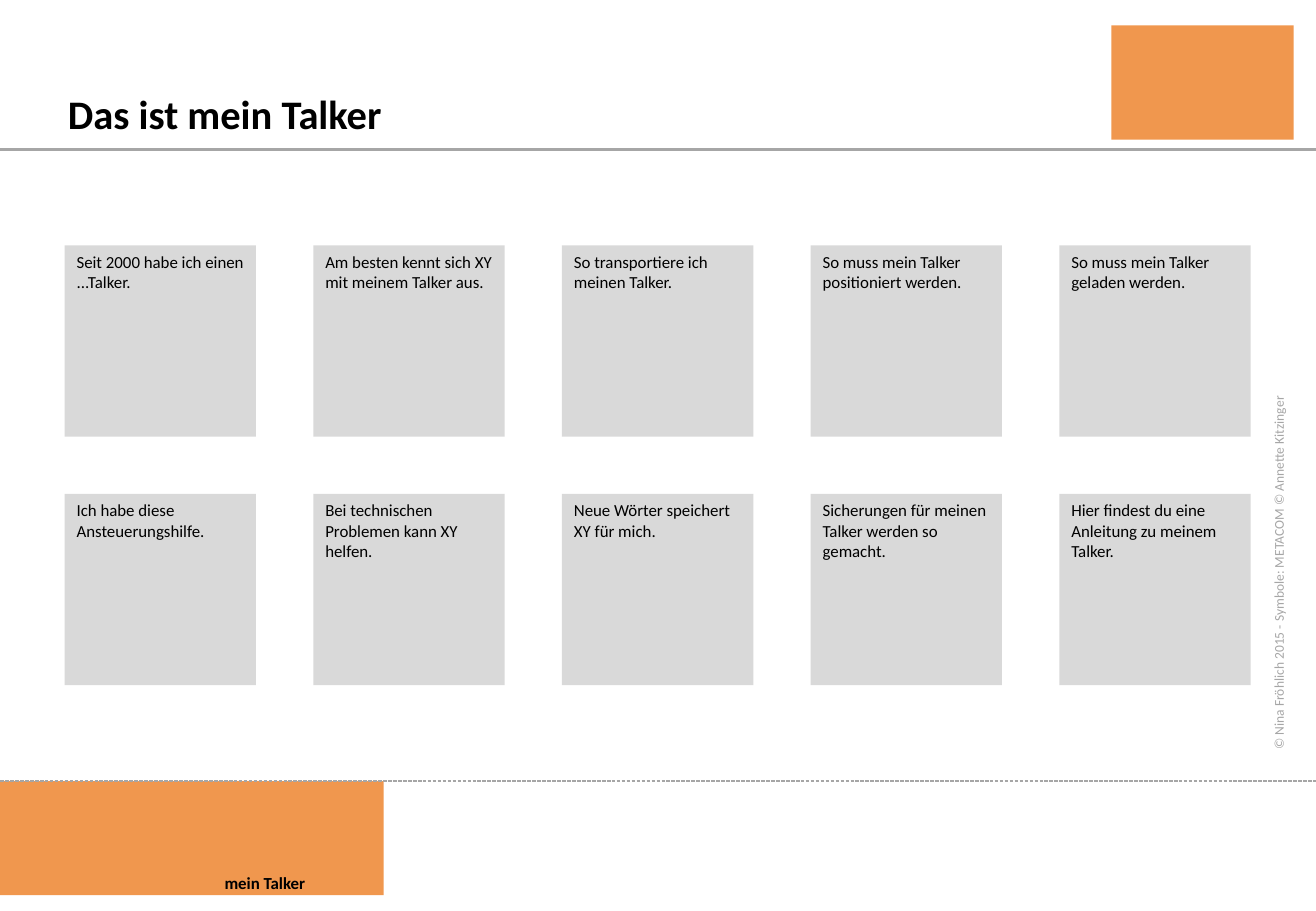
from lxml import etree
from pptx import Presentation
from pptx.dml.color import RGBColor
from pptx.enum.dml import MSO_LINE
from pptx.enum.shapes import MSO_CONNECTOR, MSO_SHAPE
from pptx.enum.text import MSO_ANCHOR, MSO_AUTO_SIZE, PP_ALIGN
from pptx.oxml.ns import qn
from pptx.util import Pt

RECTANGLE = MSO_SHAPE.RECTANGLE
STRAIGHT = MSO_CONNECTOR.STRAIGHT
SHORT_DASH = MSO_LINE.SQUARE_DOT
TOP = MSO_ANCHOR.TOP
LEFT = PP_ALIGN.LEFT
FIXED_SIZE = MSO_AUTO_SIZE.NONE

ORANGE = RGBColor(0xF0, 0x97, 0x4E)
CARD_GRAY = RGBColor(0xD9, 0xD9, 0xD9)
RULE_GRAY = RGBColor(0xA6, 0xA6, 0xA6)
BLACK = RGBColor(0, 0, 0)

SLIDE_WIDTH, SLIDE_HEIGHT = 780, 540
CARD_SIZE, CARD_PITCH = 113.4, 147.4
CARDS_LEFT, CARDS_TOP = 38.3, 145.4
CARD_ROWS = [
    [
        "Seit 2000 habe ich einen ...Talker.",
        "Am besten kennt sich XY mit meinem Talker aus.",
        "So transportiere ich meinen Talker.",
        "So muss mein Talker positioniert werden.",
        "So muss mein Talker geladen werden.",
    ],
    [
        "Ich habe diese Ansteuerungshilfe.",
        "Bei technischen Problemen kann XY helfen.",
        "Neue Wörter speichert XY für mich.",
        "Sicherungen für meinen Talker werden so gemacht.",
        "Hier findest du eine Anleitung zu meinem Talker.",
    ],
]


class TalkerPage:
    font_name = "Calibri"

    def __init__(self, slide):
        self.slide = slide

    def set_text(self, shape, text, size=10, color=BLACK, bold=False):
        frame = shape.text_frame
        frame.text = text
        frame.word_wrap = True
        frame.auto_size = FIXED_SIZE
        frame.vertical_anchor = TOP
        frame.margin_left = frame.margin_right = Pt(7.2)
        frame.margin_top = frame.margin_bottom = Pt(3.6)
        paragraph = frame.paragraphs[0]
        paragraph.alignment = LEFT
        font = paragraph.runs[0].font
        font.name = self.font_name
        font.size = Pt(size)
        font.bold = bold
        font.color.rgb = color

    def title(self, text, left, top, width, height):
        heading = self.slide.shapes.title
        heading.left, heading.top = Pt(left), Pt(top)
        heading.width, heading.height = Pt(width), Pt(height)
        self.set_text(heading, text, size=24, bold=True)

    def block(self, left, top, width, height, color):
        block = self.slide.shapes.add_shape(
            RECTANGLE, Pt(left), Pt(top), Pt(width), Pt(height))
        block.shadow.inherit = False
        block.fill.solid()
        block.fill.fore_color.rgb = color
        block.line.fill.background()
        return block

    def label(self, text, left, top, width, height, rotation=0, **style):
        label = self.slide.shapes.add_textbox(
            Pt(left), Pt(top), Pt(width), Pt(height))
        label.rotation = rotation
        self.set_text(label, text, **style)

    def rule(self, y, weight, dash=None):
        rule = self.slide.shapes.add_connector(
            STRAIGHT, 0, Pt(y), Pt(SLIDE_WIDTH), Pt(y))
        rule.line.color.rgb = RULE_GRAY
        rule.line.width = Pt(weight)
        if dash is not None:
            rule.line.dash_style = dash
        etree.SubElement(rule._element.spPr, qn("a:effectLst"))


def main():
    presentation = Presentation()
    presentation.slide_width = Pt(SLIDE_WIDTH)
    presentation.slide_height = Pt(SLIDE_HEIGHT)
    title_only = presentation.slide_layouts[5]
    page = TalkerPage(presentation.slides.add_slide(title_only))

    # Header and footer
    page.block(0, 463, 227.5, 67.7, ORANGE)
    page.rule(88.6, 1.5)
    page.block(658.8, 15.1, 108, 67.7, ORANGE)
    page.rule(463, 0.75, SHORT_DASH)
    page.title("Das ist mein Talker", 33, 49, 610, 36.7)
    page.label("mein Talker", 126, 514, 94.3, 17.3, bold=True)

    # Copyright line along the right edge
    page.label("© Nina Fröhlich 2015 - Symbole: METACOM © Annette Kitzinger",
               630.7, 315.4, 254.9, 17.3, rotation=270, size=8, color=RULE_GRAY)

    # Grid of cards
    for row, texts in enumerate(CARD_ROWS):
        for column, text in enumerate(texts):
            card = page.block(CARDS_LEFT + column * CARD_PITCH,
                              CARDS_TOP + row * CARD_PITCH,
                              CARD_SIZE, CARD_SIZE, CARD_GRAY)
            page.set_text(card, text)

    presentation.save("out.pptx")


if __name__ == "__main__":
    main()
